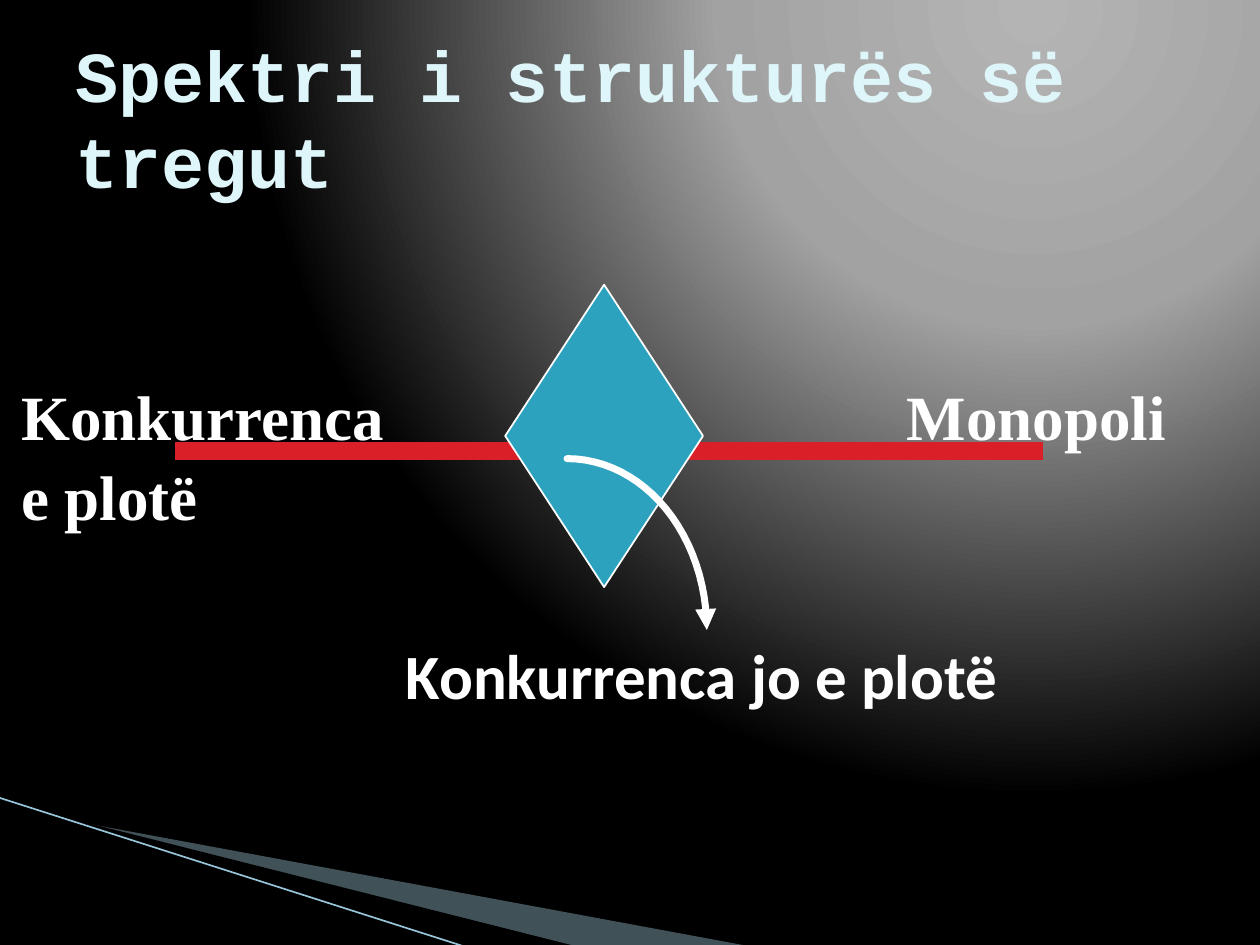
from math import cos, pi, sin

from lxml import etree
from pptx import Presentation
from pptx.dml.color import RGBColor
from pptx.enum.shapes import MSO_CONNECTOR, MSO_SHAPE
from pptx.enum.text import MSO_ANCHOR, MSO_AUTO_SIZE, PP_ALIGN
from pptx.oxml import parse_xml
from pptx.oxml.ns import nsdecls, qn
from pptx.util import Inches, Pt

LINE = MSO_CONNECTOR.STRAIGHT
DIAMOND = MSO_SHAPE.DIAMOND
MIDDLE = MSO_ANCHOR.MIDDLE
GROW = MSO_AUTO_SIZE.SHAPE_TO_FIT_TEXT
FIXED = MSO_AUTO_SIZE.NONE
LEFT, CENTER = PP_ALIGN.LEFT, PP_ALIGN.CENTER

WHITE = RGBColor(0xFF, 0xFF, 0xFF)
BLACK = RGBColor(0, 0, 0)
ICE = RGBColor(0xDE, 0xF5, 0xFA)
MIST = RGBColor(0xA0, 0xCB, 0xDC)
SKY = RGBColor(0x97, 0xC5, 0xD8)
TEAL = RGBColor(0x2D, 0xA2, 0xBF)
RED = RGBColor(0xDA, 0x1F, 0x28)


def outline(points, close):
    """Draw a freeform through points given in inches."""
    spots = [(Inches(x), Inches(y)) for x, y in points]
    pen = slide.shapes.build_freeform(*spots[0])
    pen.add_line_segments(spots[1:], close=close)
    shape = pen.convert_to_shape()
    shape.shadow.inherit = False
    return shape


def style(para, look):
    for name, value in look.items():
        if name == "color":
            para.font.color.rgb = value
        else:
            setattr(para.font, name, value)


prs = Presentation()
prs.slide_width, prs.slide_height = Inches(10), Inches(7.5)
slide = prs.slides.add_slide(prs.slide_layouts[5])

# Background: glow from the upper right
stops = "".join(
    f'<a:gs pos="{pos * 1000}"><a:srgbClr val="{color}"/></a:gs>'
    for pos, color in [(0, "B4B4B4"), (40, "A2A2A2"), (100, "000000")])
slide.element.cSld.insert(0, parse_xml(
    f'<p:bg {nsdecls("p", "a")}><p:bgPr><a:gradFill><a:gsLst>{stops}</a:gsLst>'
    '<a:path path="circle"><a:fillToRect l="65000" t="0" r="0" b="98000"/></a:path>'
    '</a:gradFill><a:effectLst/></p:bgPr></p:bg>'))

# Corner wedges
wedges = [
    ([(0.55, 6.51), (5.95, 7.51), (4.56, 7.51), (0.55, 6.5)], MIST, 40),
    ([(0.53, 6.49), (4.57, 7.51), (3.72, 7.52), (0.54, 6.5)], BLACK, 100),
]
for points, color, alpha in wedges:
    wedge = outline(points, True)
    wedge.fill.solid()
    wedge.fill.fore_color.rgb = color
    wedge.line.fill.background()
    if alpha < 100:
        tint = wedge.element.spPr.find(".//" + qn("a:srgbClr"))
        etree.SubElement(tint, qn("a:alpha")).set("val", str(alpha * 1000))

# Corner line and market axis
for x1, y1, x2, y2, color, width in [
        (-0.01, 6.33, 3.71, 7.52, SKY, 0.95),
        (1.39, 3.58, 8.28, 3.58, RED, 10)]:
    line = slide.shapes.add_connector(
        LINE, Inches(x1), Inches(y1), Inches(x2), Inches(y2))
    line.line.color.rgb = color
    line.line.width = Pt(width)
    etree.SubElement(line.element.spPr, qn("a:effectLst"))

# Title
title = slide.shapes.title
title.left, title.top = Inches(0.5), Inches(0.3)
title.width, title.height = Inches(9), Inches(1.25)
frame = title.text_frame
frame.text = "Spektri i strukturës së tregut"
frame.word_wrap = True
frame.auto_size = FIXED
frame.vertical_anchor = MIDDLE
frame.paragraphs[0].alignment = LEFT
style(frame.paragraphs[0],
      {"name": "Courier New", "size": Pt(41), "bold": True, "color": ICE})

# Middle ground between the two extremes
diamond = slide.shapes.add_shape(
    DIAMOND, Inches(4.01), Inches(2.26), Inches(1.57), Inches(2.4))
diamond.shadow.inherit = False
diamond.fill.solid()
diamond.fill.fore_color.rgb = TEAL
diamond.line.color.rgb = WHITE
diamond.line.width = Pt(1)

# Labels
label = {"size": Pt(36), "bold": True, "color": WHITE}
labels = [
    (0.07, 2.92, 3.21, 1.3, "Konkurrenca\ne plotë", "Times New Roman", LEFT, 1.05),
    (7.1, 2.92, 2.4, 1.71, "Monopoli", "Times New Roman", LEFT, 1.05),
    (2.75, 5, 5.75, 0.7, "Konkurrenca jo e plotë ", "Calibri", CENTER, 1.0),
]
for x, y, w, h, text, font, align, space in labels:
    box = slide.shapes.add_textbox(Inches(x), Inches(y), Inches(w), Inches(h))
    frame = box.text_frame
    frame.text = text
    frame.word_wrap = False
    frame.auto_size = GROW
    for para in frame.paragraphs:
        para.alignment = align
        para.line_spacing = space
        style(para, {**label, "name": font})

# Quarter-ellipse arrow from the diamond to its label
steps = 24
turns = [pi / 2 * i / steps for i in range(steps + 1)]
arrow = outline([(4.5 + 1.11 * sin(t), 5 - 1.36 * cos(t)) for t in turns], False)
arrow.fill.background()
arrow.line.color.rgb = WHITE
arrow.line.width = Pt(4)
stroke = arrow.element.spPr.find(qn("a:ln"))
stroke.set("cap", "rnd")
etree.SubElement(stroke, qn("a:round"))
etree.SubElement(stroke, qn("a:tailEnd")).set("type", "triangle")

prs.save("out.pptx")
